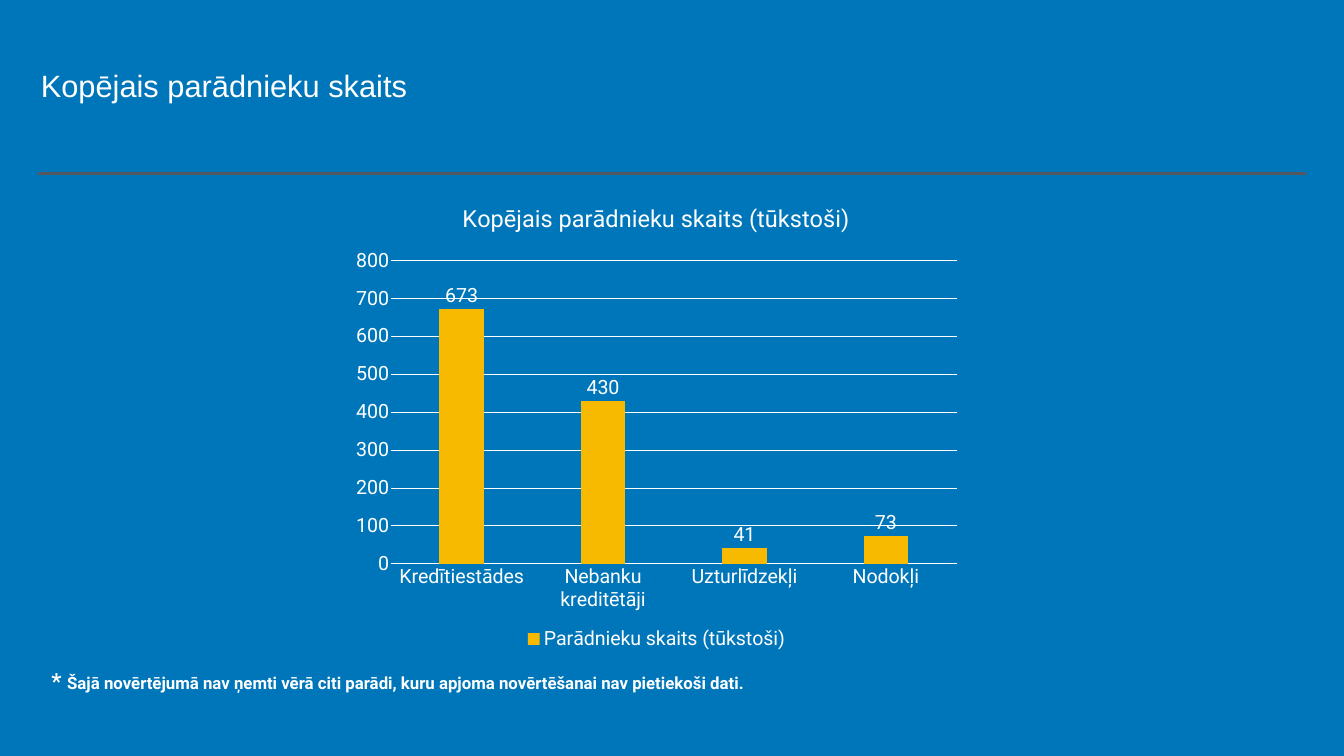
from lxml import etree
from pptx import Presentation
from pptx.chart.data import CategoryChartData
from pptx.dml.color import RGBColor
from pptx.enum.chart import XL_CHART_TYPE, XL_LABEL_POSITION, XL_LEGEND_POSITION, XL_TICK_MARK
from pptx.enum.shapes import MSO_CONNECTOR
from pptx.enum.text import MSO_ANCHOR, MSO_AUTO_SIZE, PP_ALIGN
from pptx.oxml.ns import qn
from pptx.util import Inches, Pt

COLUMNS = XL_CHART_TYPE.COLUMN_CLUSTERED
OUTSIDE_END = XL_LABEL_POSITION.OUTSIDE_END
BOTTOM = XL_LEGEND_POSITION.BOTTOM
NO_TICK = XL_TICK_MARK.NONE
STRAIGHT = MSO_CONNECTOR.STRAIGHT
MIDDLE = MSO_ANCHOR.MIDDLE
NO_AUTOFIT = MSO_AUTO_SIZE.NONE
LEFT = PP_ALIGN.LEFT

COLORS = {"background": "0076BA", "text": "FFFFFF", "rule": "53585F", "bar": "F8BA00"}
DEBTORS = {"Kredītiestādes": 673, "Nebanku kreditētāji": 430, "Uzturlīdzekļi": 41, "Nodokļi": 73}
CHART_FONT = {"name": "Roboto", "size": Pt(28), "bold": False}
CHART_TITLE_FONT = {"name": "Roboto", "size": Pt(33.6), "bold": False}


def color(name):
    return RGBColor.from_string(COLORS[name])


def set_values(target, values):
    for name, value in values.items():
        setattr(target, name, value)


def format_font(font, values):
    set_values(font, values)
    font.color.rgb = color("text")


def place(shape, left, top, width, height):
    set_values(shape, {"left": Inches(left), "top": Inches(top),
                       "width": Inches(width), "height": Inches(height)})


def write_text(box, spans):
    frame = box.text_frame
    margins = dict.fromkeys(("margin_left", "margin_top", "margin_right", "margin_bottom"), Inches(0.06))
    set_values(frame, {"word_wrap": True, "auto_size": NO_AUTOFIT, "vertical_anchor": MIDDLE, **margins})
    para = frame.paragraphs[0]
    set_values(para, {"alignment": LEFT, "line_spacing": 1.0, "space_before": Pt(0)})
    for text, values in spans:
        span = para.add_run()
        span.text = text
        format_font(span.font, values)


def add_title(page, text):
    title = page.shapes.title
    place(title, 0.75, 1.27, 15.7, 0.85)
    write_text(title, [(text, {"name": "Arial", "size": Pt(44), "bold": False})])


def add_rule(page):
    rule = page.shapes.add_connector(STRAIGHT, Inches(0.75), Inches(3.45), Inches(25.91), Inches(3.45))
    rule.line.color.rgb = color("rule")
    rule.line.width = Pt(4)
    etree.SubElement(rule.element.spPr, qn("a:effectLst"))


def add_footnote(page, text):
    box = page.shapes.add_textbox(Inches(0.96), Inches(13.17), Inches(24.2), Inches(0.65))
    write_text(box, [("* ", {"name": "Roboto", "size": Pt(32), "bold": True}),
                     (text, {"name": "Roboto", "size": Pt(24), "bold": True})])


def format_line(line):
    line.color.rgb = color("text")
    line.width = Pt(0.75)


def format_axes(chart):
    for axis in (chart.category_axis, chart.value_axis):
        set_values(axis, {"major_tick_mark": NO_TICK, "minor_tick_mark": NO_TICK})
        format_font(axis.tick_labels.font, CHART_FONT)
    format_line(chart.category_axis.format.line)
    values = chart.value_axis
    set_values(values, {"minimum_scale": 0, "maximum_scale": 800, "major_unit": 100,
                        "has_major_gridlines": True})
    values.format.line.fill.background()
    format_line(values.major_gridlines.format.line)


def format_bars(plot):
    set_values(plot, {"gap_width": 219, "overlap": -27, "vary_by_categories": False})
    series = plot.series[0]
    series.format.fill.solid()
    series.format.fill.fore_color.rgb = color("bar")
    labels = series.data_labels
    set_values(labels, {"show_value": True, "position": OUTSIDE_END})
    format_font(labels.font, CHART_FONT)


def add_debtor_chart(page, title):
    data = CategoryChartData()
    data.categories = DEBTORS.keys()
    data.add_series("Parādnieku skaits (tūkstoši)", DEBTORS.values())
    chart = page.shapes.add_chart(COLUMNS, Inches(6.82), Inches(3.69),
                                  Inches(12.41), Inches(9.29), data).chart
    format_font(chart.font, CHART_FONT)
    chart.has_title = True
    para = chart.chart_title.text_frame.paragraphs[0]
    span = para.add_run()
    span.text = title
    format_font(span.font, CHART_TITLE_FONT)
    chart.chart_title.include_in_layout = False
    chart.has_legend = True
    set_values(chart.legend, {"position": BOTTOM, "include_in_layout": False})
    format_font(chart.legend.font, CHART_FONT)
    format_axes(chart)
    format_bars(chart.plots[0])


def main():
    deck = Presentation()
    set_values(deck, {"slide_width": Inches(26.67), "slide_height": Inches(15)})
    page = deck.slides.add_slide(deck.slide_layouts.get_by_name("Title Only"))
    page.background.fill.solid()
    page.background.fill.fore_color.rgb = color("background")
    add_title(page, "Kopējais parādnieku skaits")
    add_rule(page)
    add_footnote(page, "Šajā novērtējumā nav ņemti vērā citi parādi, "
                       "kuru apjoma novērtēšanai nav pietiekoši dati.")
    add_debtor_chart(page, "Kopējais parādnieku skaits (tūkstoši)")
    deck.save("out.pptx")


if __name__ == "__main__":
    main()
